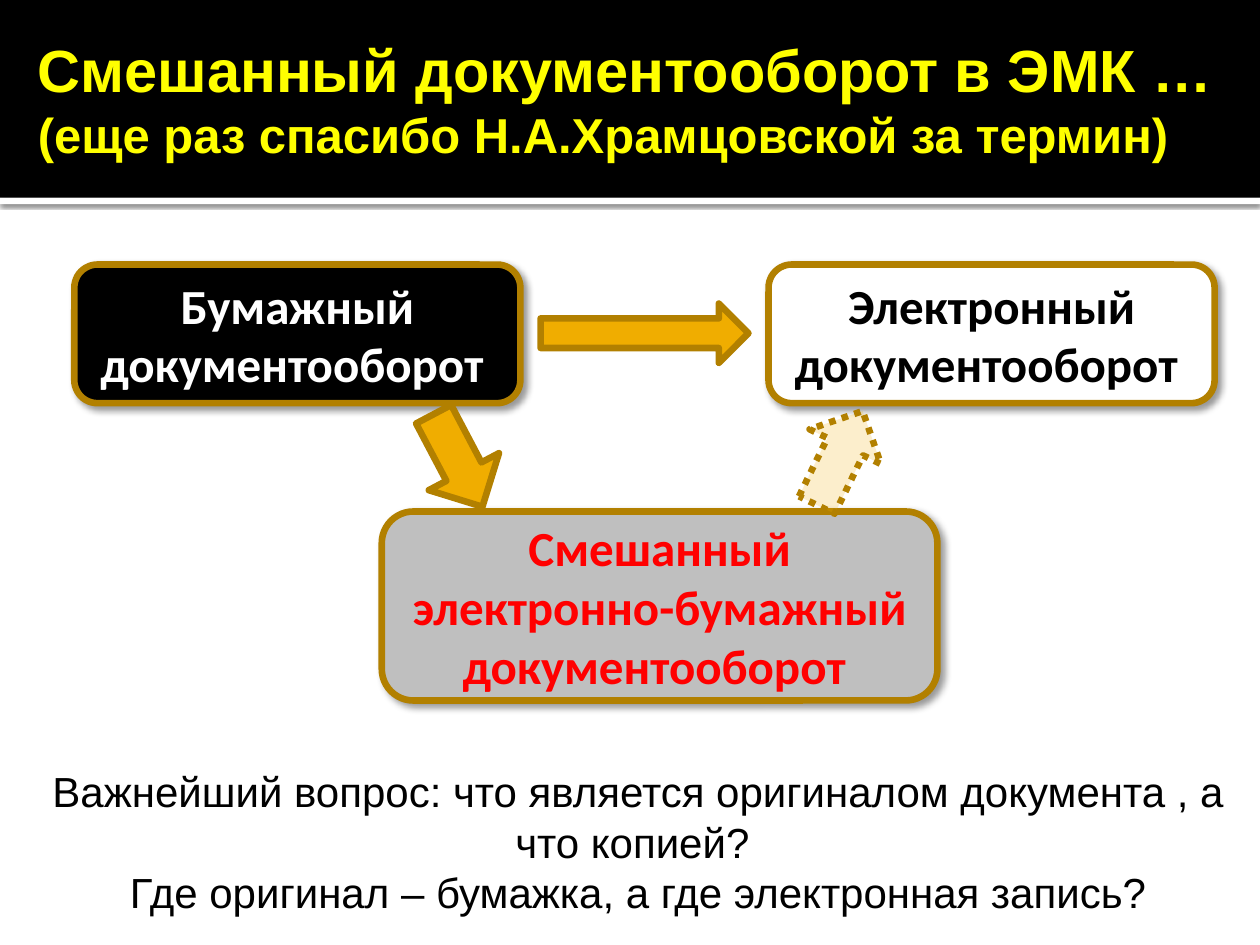
from lxml.etree import SubElement
from pptx import Presentation
from pptx.dml.color import RGBColor
from pptx.enum.dml import MSO_LINE
from pptx.enum.shapes import MSO_SHAPE
from pptx.enum.text import MSO_ANCHOR, MSO_AUTO_SIZE, PP_ALIGN
from pptx.oxml.ns import qn
from pptx.util import Inches, Pt

BLACK = RGBColor(0, 0, 0)
WHITE = RGBColor(255, 255, 255)
GRAY = RGBColor(0xBF, 0xBF, 0xBF)
RED = RGBColor(255, 0, 0)
YELLOW = RGBColor(255, 255, 0)
GOLD = RGBColor(0xF0, 0xAD, 0)
BROWN = RGBColor(0xB2, 0x80, 0)

COLS, ROWS = 100, 75
TITLE = [("Смешанный документооборот в ЭМК …", 34),
         ("(еще раз спасибо Н.А.Храмцовской за термин)", 28)]
ASK = [("Важнейший вопрос: что является оригиналом документа , а что копией? ", 24),
       ("Где оригинал – бумажка, а где электронная запись?", 24)]
BARS = [((0, 15.7, COLS, 0.5), WHITE, (60, 2.5, 0.8, 90)),
        ((0, 0, COLS, 15.7), BLACK, None)]
BOXES = [
    ((5.9, 21, 35.4, 11), BLACK, WHITE, ["Бумажный документооборот "]),
    ((61, 21, 35.4, 11), WHITE, BLACK, ["Электронный документооборот "]),
    ((30.3, 40.6, 44.1, 15), GRAY, RED,
     ["Смешанный электронно-бумажный", "документооборот "]),
]
ARROWS = [((42.9, 24.1, 16.5, 4.7), 0, False),
          ((32.2, 33.4, 8.3, 6.3), 62.2, False),
          ((62.5, 33.2, 8.3, 6.3), 296, True)]

deck = Presentation()
deck.slide_width, deck.slide_height = Inches(10), Inches(7.5)
page = deck.slides.add_slide(deck.slide_layouts[5])


def put(obj, **form):
    for key, val in form.items():
        setattr(obj, key, val)


def place(cells):
    col, row = deck.slide_width / COLS, deck.slide_height / ROWS
    return [round(val * step) for val, step in zip(cells, (col, row, col, row))]


def shade(shape, alpha, blur, dist, angle):
    node = shape._element.spPr.find(qn("a:effectLst"))
    outer = SubElement(node, qn("a:outerShdw"), blurRad=str(Pt(blur)),
                       dist=str(Pt(dist)), dir=str(angle * 60000),
                       algn="ctr", rotWithShape="0")
    tint = SubElement(outer, qn("a:srgbClr"), val="000000")
    SubElement(tint, qn("a:alpha"), val=str(alpha * 1000))


def draw(kind, cells, fill, edge=True):
    shape = page.shapes.add_shape(kind, *place(cells))
    shape.shadow.inherit = False
    shape.fill.solid()
    shape.fill.fore_color.rgb = fill
    if edge:
        shape.line.color.rgb = BROWN
        shape.line.width = Pt(3.78)
    else:
        shape.line.fill.background()
    return shape


def write(shape, lines, color, face, bold, align, anchor):
    frame = shape.text_frame
    put(frame, word_wrap=True, vertical_anchor=anchor, auto_size=MSO_AUTO_SIZE.NONE)
    for idx, (text, size) in enumerate(lines):
        para = frame.add_paragraph() if idx else frame.paragraphs[0]
        para.alignment = align
        run = para.add_run()
        run.text = text
        put(run.font, name=face, size=Pt(size), bold=bold)
        run.font.color.rgb = color


for cells, fill, cast in BARS:
    bar = draw(MSO_SHAPE.RECTANGLE, cells, fill, False)
    if cast:
        shade(bar, *cast)

title = page.shapes.title
put(title, **dict(zip(("left", "top", "width", "height"), place((2, 2.1, 96.1, 11.4)))))
write(title, TITLE, YELLOW, "Arial", True, PP_ALIGN.LEFT, MSO_ANCHOR.TOP)
page.shapes._spTree.append(title._element)

for cells, fill, ink, lines in BOXES:
    box = draw(MSO_SHAPE.ROUNDED_RECTANGLE, cells, fill)
    shade(box, 40, 4, 3, 45)
    write(box, [(text, 28) for text in lines], ink, "Calibri", True,
          PP_ALIGN.CENTER, MSO_ANCHOR.MIDDLE)

for cells, turn, faint in ARROWS:
    arrow = draw(MSO_SHAPE.RIGHT_ARROW, cells, GOLD)
    arrow.rotation = turn
    if faint:
        arrow.line.dash_style = MSO_LINE.ROUND_DOT
        tint = arrow._element.spPr.find(qn("a:solidFill"))[0]
        SubElement(tint, qn("a:alpha"), val="20000")

note = page.shapes.add_textbox(*place((2.4, 60.3, 96.5, 13.1)))
write(note, ASK, BLACK, "Arial", False, PP_ALIGN.CENTER, MSO_ANCHOR.TOP)

deck.save("out.pptx")
